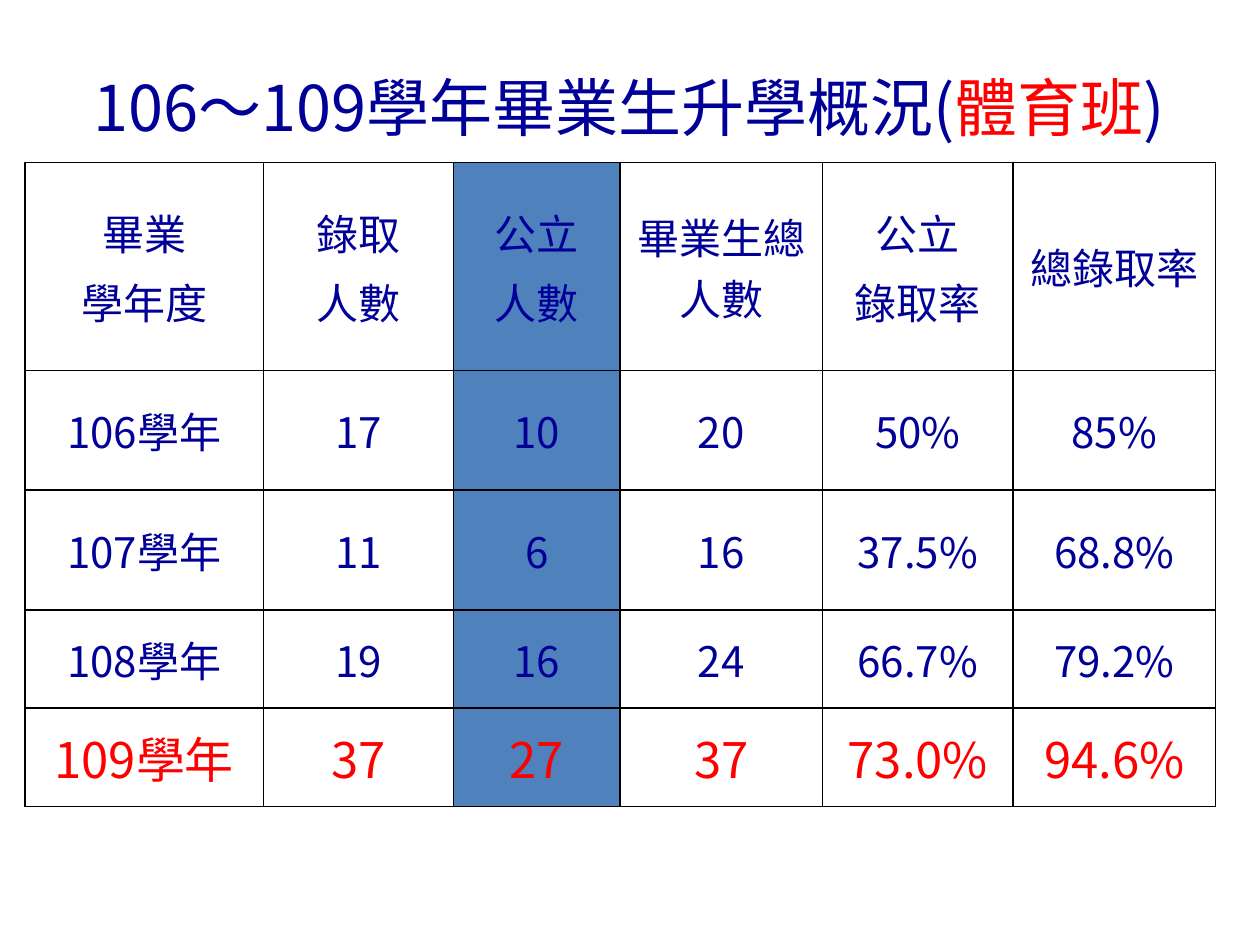
"""Build the slide on further-study results of the sports class graduates."""
import pptx
import pptx.dml.color
import pptx.enum.text
import pptx.oxml
import pptx.oxml.ns
import pptx.util
from pptx.util import Inches, Pt

NAVY = pptx.dml.color.RGBColor(0x00, 0x00, 0x99)
RED = pptx.dml.color.RGBColor(0xFF, 0x00, 0x00)
BLUE = pptx.dml.color.RGBColor(0x4F, 0x81, 0xBD)
FONT = "Noto Sans CJK SC"

TITLE = [("106～109學年畢業生升學概況(", NAVY), ("體育班", RED), (")", NAVY)]
ROWS = [
    ["畢業\n學年度", "錄取\n人數", "公立\n人數", "畢業生總人數", "公立\n錄取率", "總錄取率"],
    ["106學年", "17", "10", "20", "50%", "85%"],
    ["107學年", "11", "6", "16", "37.5%", "68.8%"],
    ["108學年", "19", "16", "24", "66.7%", "79.2%"],
    ["109學年", "37", "27", "37", "73.0%", "94.6%"],
]
COLUMN_WIDTHS = [1.89, 1.51, 1.32, 1.61, 1.51, 1.61]
ROW_HEIGHTS = [1.65, 0.95, 0.95, 0.78, 0.78]
PUBLIC_COLUMN = 2
LATEST_ROW = len(ROWS) - 1


def format_run(run, size, color):
    run.font.size = Pt(size)
    run.font.bold = False
    run.font.color.rgb = color
    run.font.name = FONT
    east_asian = pptx.oxml.parse_xml(
        f'<a:ea {pptx.oxml.ns.nsdecls("a")} typeface="{FONT}"/>')
    run.font._element.find(pptx.oxml.ns.qn("a:latin")).addnext(east_asian)


def add_borders(cell):
    properties = cell._tc.get_or_add_tcPr()
    for index, side in enumerate(("lnL", "lnR", "lnT", "lnB")):
        properties.insert(index, pptx.oxml.parse_xml(
            f'<a:{side} {pptx.oxml.ns.nsdecls("a")} w="12700"><a:solidFill>'
            f'<a:srgbClr val="000000"/></a:solidFill></a:{side}>'))


def fill_cell(cell, text, size, color, highlighted):
    cell.vertical_anchor = pptx.enum.text.MSO_ANCHOR.MIDDLE
    if highlighted:
        cell.fill.solid()
        cell.fill.fore_color.rgb = BLUE
    else:
        cell.fill.background()
    add_borders(cell)
    cell.text_frame.text = text
    for number, paragraph in enumerate(cell.text_frame.paragraphs):
        paragraph.alignment = pptx.enum.text.PP_ALIGN.CENTER
        paragraph.space_before = Pt(0.2 * size if number else 0)
        for run in paragraph.runs:
            format_run(run, size, color)


def add_title(slide):
    title = slide.shapes.title
    title.left, title.top = Inches(0.27), Inches(0.3)
    title.width, title.height = Inches(9.45), Inches(1.08)
    title.text_frame.vertical_anchor = pptx.enum.text.MSO_ANCHOR.MIDDLE
    title.text_frame.word_wrap = True
    paragraph = title.text_frame.paragraphs[0]
    paragraph.alignment = pptx.enum.text.PP_ALIGN.CENTER
    for text, color in TITLE:
        run = paragraph.add_run()
        run.text = text
        format_run(run, 36, color)


def add_results_table(slide):
    table = slide.shapes.add_table(
        len(ROWS), len(COLUMN_WIDTHS), Inches(0.2), Inches(1.29),
        Inches(sum(COLUMN_WIDTHS)), Inches(sum(ROW_HEIGHTS))).table
    table.first_row = False
    table.horz_banding = False
    for column, width in zip(table.columns, COLUMN_WIDTHS):
        column.width = Inches(width)
    for row, height in zip(table.rows, ROW_HEIGHTS):
        row.height = Inches(height)
    for row_index, values in enumerate(ROWS):
        size, color = (28, RED) if row_index == LATEST_ROW else (24, NAVY)
        for column_index, value in enumerate(values):
            fill_cell(table.cell(row_index, column_index), value, size, color,
                      column_index == PUBLIC_COLUMN)


def main():
    presentation = pptx.Presentation()
    presentation.slide_width = Inches(10)
    presentation.slide_height = Inches(7.5)
    slide = presentation.slides.add_slide(presentation.slide_layouts[5])
    add_title(slide)
    add_results_table(slide)
    presentation.save("out.pptx")


if __name__ == "__main__":
    main()
